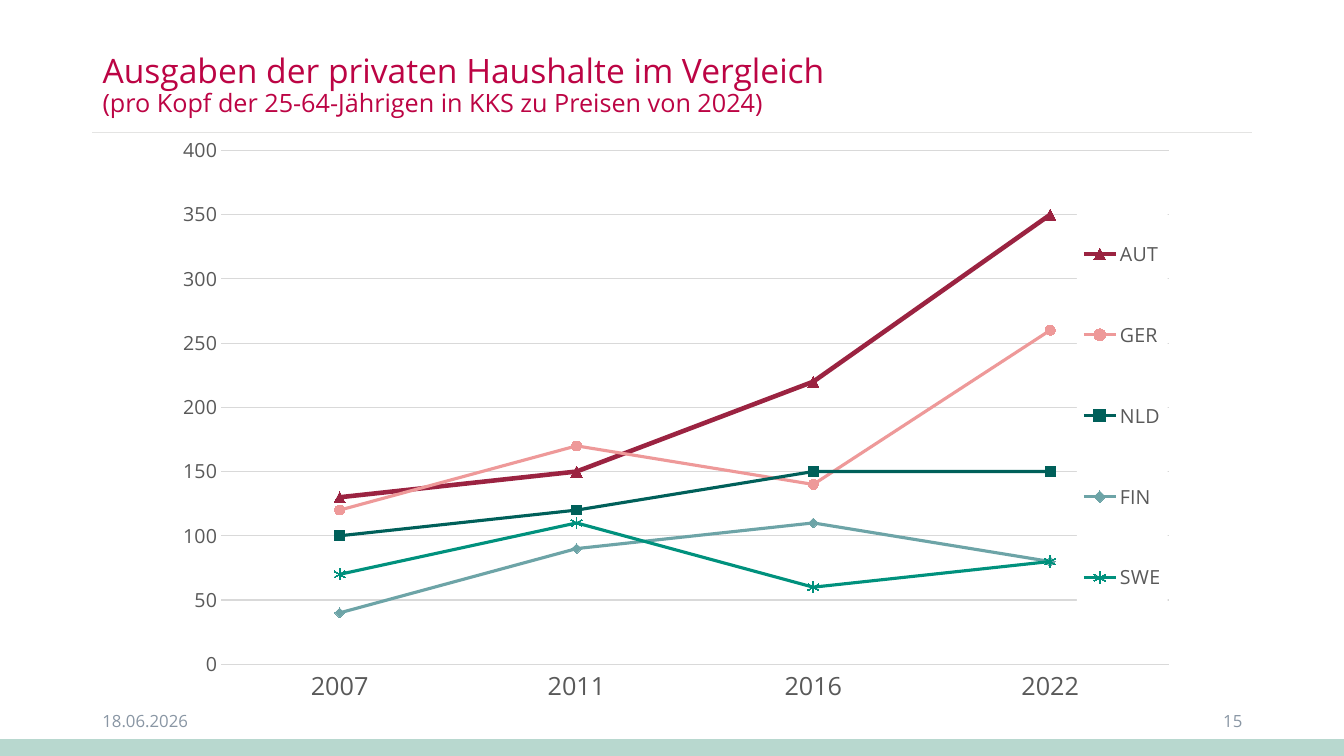
from lxml.etree import SubElement
from pptx import Presentation
from pptx.chart.data import CategoryChartData
from pptx.dml.color import RGBColor
from pptx.enum.chart import XL_CHART_TYPE, XL_LEGEND_POSITION, XL_MARKER_STYLE, XL_TICK_MARK
from pptx.enum.shapes import MSO_CONNECTOR, MSO_SHAPE
from pptx.enum.text import MSO_ANCHOR, MSO_AUTO_SIZE, PP_ALIGN
from pptx.oxml import parse_xml
from pptx.oxml.ns import nsdecls, qn
from pptx.util import Cm, Pt

FONT = "Open Sans"
CRIMSON = RGBColor(0xBC, 0x04, 0x44)
MINT = RGBColor(0xB8, 0xD8, 0xCF)
RULE_GREY = RGBColor(0xE4, 0xE4, 0xE3)
GRID_GREY = RGBColor(0xD9, 0xD9, 0xD9)
AXIS_GREY = RGBColor(0x59, 0x59, 0x59)
FOOTER_GREY = RGBColor(0x89, 0x96, 0xA4)
BLACK = RGBColor(0, 0, 0)
WINE = RGBColor(0x9B, 0x23, 0x41)
ROSE = RGBColor(0xEE, 0x99, 0x99)
PINE = RGBColor(0x00, 0x60, 0x5A)
STEEL = RGBColor(0x6D, 0xA4, 0xA7)
TEAL = RGBColor(0x00, 0x91, 0x7D)

SLIDE_W, SLIDE_H = Cm(33.87), Cm(19.05)
LEFT, CONTENT_W = Cm(2.33), Cm(29.23)
FOOTER_W = Cm(7.62)

YEARS = ["2007", "2011", "2016", "2022"]
COUNTRIES = [
    ("AUT", [130, 150, 220, 350], WINE, 3.25, XL_MARKER_STYLE.TRIANGLE, 8),
    ("GER", [120, 170, 140, 260], ROSE, 2.25, XL_MARKER_STYLE.CIRCLE, 7),
    ("NLD", [100, 120, 150, 150], PINE, 2.25, XL_MARKER_STYLE.SQUARE, 7),
    ("FIN", [40, 90, 110, 80], STEEL, 2.25, XL_MARKER_STYLE.DIAMOND, 7),
    ("SWE", [70, 110, 60, 80], TEAL, 2.25, XL_MARKER_STYLE.STAR, 8),
]


def format_font(font, size, color):
    font.name = FONT
    font.size = Pt(size)
    font.color.rgb = color


def add_text(p, text, size=12, color=FOOTER_GREY, align=PP_ALIGN.LEFT):
    p.alignment = align
    r = p.add_run()
    r.text = text
    format_font(r.font, size, color)


def add_title(slide, heading, subheading):
    sp = slide.shapes.title
    sp.left, sp.top, sp.width, sp.height = LEFT, Cm(1), CONTENT_W, Cm(2.34)
    tf = sp.text_frame
    tf.auto_size = MSO_AUTO_SIZE.NONE
    tf.vertical_anchor = MSO_ANCHOR.MIDDLE
    p = tf.paragraphs[0]
    p.line_spacing = 0.9
    add_text(p, heading, size=24, color=CRIMSON)
    p.add_line_break()
    SubElement(p._p.find(qn("a:br")), qn("a:rPr"), sz="2400")
    add_text(p, subheading, size=18, color=CRIMSON)


def add_footer(slide, text, left, align):
    sp = slide.shapes.add_textbox(left, Cm(17.65), FOOTER_W, Cm(1.02))
    tf = sp.text_frame
    tf.word_wrap = True
    tf.vertical_anchor = MSO_ANCHOR.MIDDLE
    add_text(tf.paragraphs[0], text, align=align)


def add_rule(slide, top):
    line = slide.shapes.add_connector(MSO_CONNECTOR.STRAIGHT, LEFT, top, LEFT + CONTENT_W, top)
    line.line.color.rgb = RULE_GREY
    line.line.width = Pt(0.5)
    SubElement(line._element.spPr, qn("a:effectLst"))


def add_band(slide, height):
    sp = slide.shapes.add_shape(MSO_SHAPE.RECTANGLE, 0, SLIDE_H - height, SLIDE_W, height)
    sp.shadow.inherit = False
    sp.fill.solid()
    sp.fill.fore_color.rgb = MINT
    sp.line.color.rgb = MINT
    sp.line.width = Pt(1)


def layout_xml(x, y, w, h, inner=False):
    target = '<c:layoutTarget val="inner"/>' if inner else ""
    return parse_xml(
        f'<c:layout {nsdecls("c")}><c:manualLayout>{target}'
        '<c:xMode val="edge"/><c:yMode val="edge"/>'
        f'<c:x val="{x}"/><c:y val="{y}"/><c:w val="{w}"/><c:h val="{h}"/>'
        "</c:manualLayout></c:layout>"
    )


def place_plot(chart):
    plot_area = chart._chartSpace.chart.plotArea
    for layout in plot_area.findall(qn("c:layout")):
        plot_area.remove(layout)
    plot_area.insert(0, layout_xml(0.053, 0.014, 0.94, 0.857, inner=True))


def add_legend(chart):
    chart.has_legend = True
    legend = chart.legend
    legend.position = XL_LEGEND_POSITION.RIGHT
    legend.include_in_layout = False
    format_font(legend.font, 14, AXIS_GREY)
    element = legend._element
    for layout in element.findall(qn("c:layout")):
        element.remove(layout)
    element.find(qn("c:legendPos")).addnext(layout_xml(0.902, 0.074, 0.09, 0.765))
    element.find(qn("c:overlay")).addnext(parse_xml(
        f'<c:spPr {nsdecls("c", "a")}><a:solidFill><a:srgbClr val="FFFFFF"/></a:solidFill>'
        "<a:ln><a:noFill/></a:ln></c:spPr>"
    ))


def format_axes(chart):
    for axis, size in ((chart.category_axis, 18), (chart.value_axis, 14)):
        axis.major_tick_mark = axis.minor_tick_mark = XL_TICK_MARK.NONE
        format_font(axis.tick_labels.font, size, AXIS_GREY)
    values = chart.value_axis
    values.minimum_scale, values.maximum_scale, values.major_unit = 0, 400, 50
    values.format.line.fill.background()
    values.has_major_gridlines = True
    for line in (chart.category_axis.format.line, values.major_gridlines.format.line):
        line.color.rgb = GRID_GREY
        line.width = Pt(0.75)


def format_series(series, color, width, style, size):
    series.smooth = False
    series.format.line.color.rgb = color
    series.format.line.width = Pt(width)
    marker = series.marker
    marker.style, marker.size = style, size
    if style == XL_MARKER_STYLE.STAR:
        marker.format.fill.background()
    else:
        marker.format.fill.solid()
        marker.format.fill.fore_color.rgb = color
    marker.format.line.color.rgb = color
    marker.format.line.width = Pt(0.75)


def add_spending_chart(slide):
    data = CategoryChartData()
    data.categories = YEARS
    for name, values, *_ in COUNTRIES:
        data.add_series(name, values)
    chart = slide.shapes.add_chart(
        XL_CHART_TYPE.LINE_MARKERS, Cm(4.23), Cm(3.45), Cm(25.4), Cm(15.24), data
    ).chart
    chart.has_title = False
    format_font(chart.font, 10, BLACK)
    chart.plots[0].vary_by_categories = False
    format_axes(chart)
    for series, (_, _, color, width, style, size) in zip(chart.plots[0].series, COUNTRIES):
        format_series(series, color, width, style, size)
    add_legend(chart)
    place_plot(chart)


def main():
    prs = Presentation()
    prs.slide_width, prs.slide_height = SLIDE_W, SLIDE_H
    slide = prs.slides.add_slide(prs.slide_layouts[5])
    add_rule(slide, Cm(3.34))
    add_band(slide, Cm(0.4))
    add_title(
        slide,
        "Ausgaben der privaten Haushalte im Vergleich",
        "(pro Kopf der 25-64-Jährigen in KKS zu Preisen von 2024)",
    )
    add_footer(slide, "18.06.2026", LEFT, PP_ALIGN.LEFT)
    add_footer(slide, "15", LEFT + CONTENT_W - FOOTER_W, PP_ALIGN.RIGHT)
    add_spending_chart(slide)
    prs.save("out.pptx")


if __name__ == "__main__":
    main()
